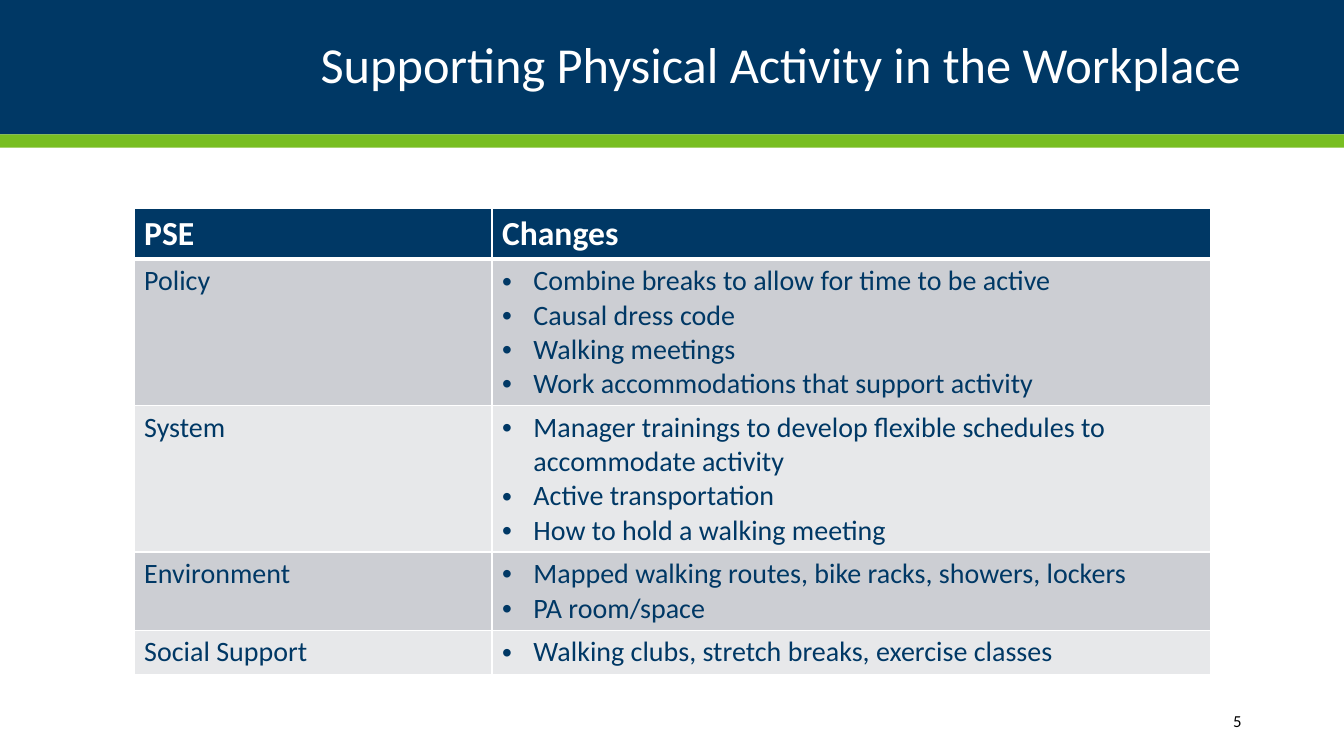
from lxml.etree import SubElement
from pptx import Presentation
from pptx.dml.color import RGBColor
from pptx.enum.shapes import MSO_SHAPE
from pptx.enum.text import MSO_ANCHOR, PP_ALIGN
from pptx.oxml.ns import qn
from pptx.util import Cm, Pt

TITLE = "Supporting Physical Activity in the Workplace"
PAGE_NUMBER = "5"
HEADINGS = ("PSE", "Changes")
# Area, its changes, and the number of text lines they fill
AREAS = [
    ("Policy", ["Combine breaks to allow for time to be active",
                "Causal dress code",
                "Walking meetings",
                "Work accommodations that support activity"], 4),
    ("System", ["Manager trainings to develop flexible schedules to accommodate activity",
                "Active transportation",
                "How to hold a walking meeting"], 4),
    ("Environment", ["Mapped walking routes, bike racks, showers, lockers",
                     "PA room/space"], 2),
    ("Social Support", ["Walking clubs, stretch breaks, exercise classes"], 1),
]

FONT = "Calibri"
NAVY = RGBColor(0x00, 0x38, 0x65)
GREEN = RGBColor(0x78, 0xBE, 0x21)
WHITE = RGBColor(0xFF, 0xFF, 0xFF)
BLACK = RGBColor(0x00, 0x00, 0x00)
ROW_BANDS = (RGBColor(0xCC, 0xCE, 0xD3), RGBColor(0xE7, 0xE8, 0xEA))

SLIDE_WIDTH, SLIDE_HEIGHT = Cm(33.87), Cm(19.05)
BANNER_HEIGHT, STRIPE_HEIGHT = Cm(3.39), Cm(0.33)
COLUMN_WIDTHS = (Cm(9.02), Cm(18.11))
HEADING_HEIGHT, LINE_HEIGHT, CELL_PADDING = Cm(1.27), Cm(0.86), Cm(0.25)
BULLET_INDENT = Cm(0.79)


def style(paragraph, size, color, bold=False):
    for run in paragraph.runs:
        run.font.name = FONT
        run.font.size = Pt(size)
        run.font.color.rgb = color
        run.font.bold = bold


def add_band(slide, top, height, color):
    band = slide.shapes.add_shape(MSO_SHAPE.RECTANGLE, 0, top, SLIDE_WIDTH, height)
    band.shadow.inherit = False
    band.fill.solid()
    band.fill.fore_color.rgb = color
    band.line.fill.background()


def add_right_text(slide, text, box, size, color, spacing=1.0):
    frame = slide.shapes.add_textbox(*box).text_frame
    frame.word_wrap = True
    frame.vertical_anchor = MSO_ANCHOR.MIDDLE
    frame.text = text
    paragraph = frame.paragraphs[0]
    paragraph.alignment = PP_ALIGN.RIGHT
    paragraph.line_spacing = spacing
    style(paragraph, size, color)


def add_borders(cell, bottom_width):
    properties = cell._tc.get_or_add_tcPr()
    for side, width in (("lnL", 1), ("lnR", 1), ("lnT", 1), ("lnB", bottom_width)):
        line = SubElement(properties, qn(f"a:{side}"), w=str(Pt(width)))
        fill = SubElement(line, qn("a:solidFill"))
        SubElement(fill, qn("a:srgbClr"), val=str(WHITE))


def add_bullet(paragraph):
    properties = paragraph._p.get_or_add_pPr()
    properties.set("marL", str(BULLET_INDENT))
    properties.set("indent", str(-BULLET_INDENT))
    SubElement(properties, qn("a:buFont"), typeface="Arial")
    SubElement(properties, qn("a:buChar"), char="•")


def fill_cell(cell, lines, size, color, background, bold=False, bulleted=False, bottom_width=1):
    add_borders(cell, bottom_width)
    cell.fill.solid()
    cell.fill.fore_color.rgb = background
    cell.text_frame.text = "\n".join(lines)
    for paragraph in cell.text_frame.paragraphs:
        style(paragraph, size, color, bold)
        if bulleted:
            add_bullet(paragraph)


def add_changes_table(slide):
    heights = [HEADING_HEIGHT] + [CELL_PADDING + LINE_HEIGHT * count for *_, count in AREAS]
    table = slide.shapes.add_table(len(heights), len(HEADINGS), Cm(3.38), Cm(5.26),
                                   sum(COLUMN_WIDTHS), sum(heights)).table
    for column, width in zip(table.columns, COLUMN_WIDTHS):
        column.width = width
    for row, height in zip(table.rows, heights):
        row.height = height

    for column, heading in enumerate(HEADINGS):
        fill_cell(table.cell(0, column), [heading], 24, WHITE, NAVY, bold=True, bottom_width=3)
    for index, (area, changes, _) in enumerate(AREAS):
        background = ROW_BANDS[index % 2]
        # The first area row shares its top edge with the thick heading rule
        fill_cell(table.cell(index + 1, 0), [area], 20, NAVY, background)
        fill_cell(table.cell(index + 1, 1), changes, 20, NAVY, background, bulleted=True)
    for column in range(len(HEADINGS)):
        top_edge = table.cell(1, column)._tc.tcPr.find(qn("a:lnT"))
        top_edge.set("w", str(Pt(3)))


def main():
    deck = Presentation()
    deck.slide_width, deck.slide_height = SLIDE_WIDTH, SLIDE_HEIGHT
    slide = deck.slides.add_slide(deck.slide_layouts[6])
    add_band(slide, 0, BANNER_HEIGHT, NAVY)
    add_band(slide, BANNER_HEIGHT, STRIPE_HEIGHT, GREEN)
    add_right_text(slide, TITLE, (Cm(2.33), Cm(0.42), Cm(29.21), Cm(2.54)), 36, WHITE, 0.9)
    add_changes_table(slide)
    add_right_text(slide, PAGE_NUMBER, (Cm(27.48), Cm(17.66), Cm(4.06), Cm(1.01)), 12, BLACK)
    deck.save("out.pptx")


if __name__ == "__main__":
    main()
